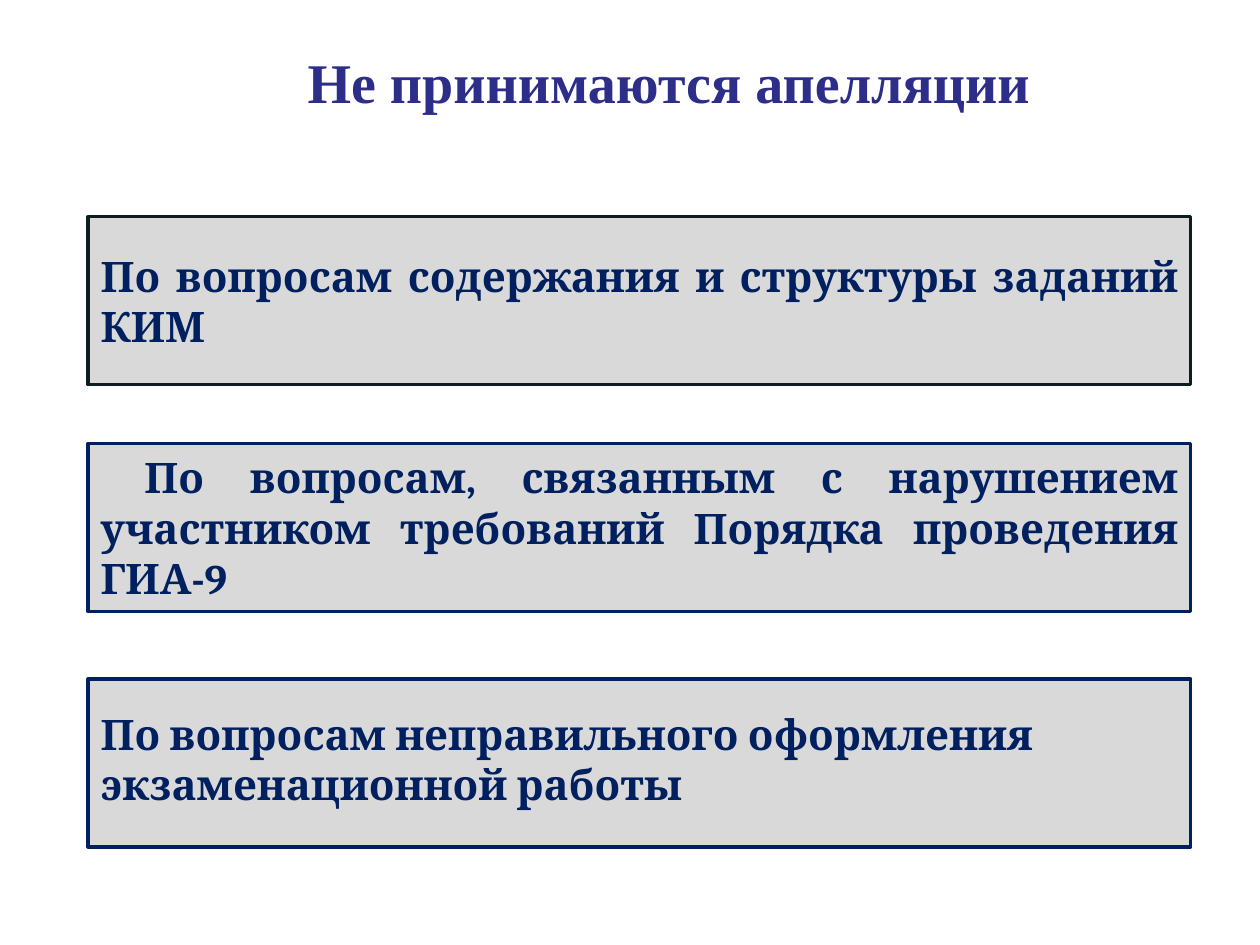
from pptx import Presentation
from pptx.dml.color import RGBColor
from pptx.enum.shapes import MSO_SHAPE
from pptx.enum.text import MSO_ANCHOR, MSO_AUTO_SIZE, PP_ALIGN
from pptx.util import Pt

TITLE_BLUE = RGBColor(0x2D, 0x2D, 0x8A)
NAVY = RGBColor(0x00, 0x20, 0x60)
NEAR_BLACK = RGBColor(0x0E, 0x1E, 0x20)
PALE_GRAY = RGBColor(0xD9, 0xD9, 0xD9)

BOX_LEFT, BOX_WIDTH, BOX_HEIGHT = 50.4, 630, 96

# Top, outline, alignment, first-line indent, bottom inset, paragraphs
REASONS = [
    (123.8, NEAR_BLACK, PP_ALIGN.JUSTIFY, 0, 3.6,
     ["По вопросам содержания и структуры заданий КИМ"]),
    (253.4, NAVY, PP_ALIGN.JUSTIFY, 25, 3.6,
     ["По вопросам, связанным с нарушением участником требований "
      "Порядка проведения ГИА-9"]),
    (388, NAVY, PP_ALIGN.LEFT, 0, 8.6,
     ["По вопросам неправильного оформления", "экзаменационной работы"]),
]


def add_run(paragraph, text, font_name, size, color):
    run = paragraph.add_run()
    run.text = text
    run.font.name = font_name
    run.font.size = Pt(size)
    run.font.bold = True
    run.font.color.rgb = color


def place_title(slide, left, top, width, height):
    title = slide.shapes.title
    title.left, title.top = Pt(left), Pt(top)
    title.width, title.height = Pt(width), Pt(height)
    frame = title.text_frame
    frame.auto_size = MSO_AUTO_SIZE.NONE
    frame.vertical_anchor = MSO_ANCHOR.MIDDLE
    heading = frame.paragraphs[0]
    heading.alignment = PP_ALIGN.CENTER
    add_run(heading, "Не принимаются апелляции", "Times New Roman", 32, TITLE_BLUE)


def add_reason(slide, left, top, width, height, outline, alignment, indent,
               bottom_inset, lines):
    reason = slide.shapes.add_shape(
        MSO_SHAPE.RECTANGLE, Pt(left), Pt(top), Pt(width), Pt(height))
    reason.shadow.inherit = False
    reason.fill.solid()
    reason.fill.fore_color.rgb = PALE_GRAY
    reason.line.color.rgb = outline
    reason.line.width = Pt(2)

    frame = reason.text_frame
    frame.word_wrap = True
    frame.vertical_anchor = MSO_ANCHOR.MIDDLE
    frame.margin_bottom = Pt(bottom_inset)
    for index, line in enumerate(lines):
        paragraph = frame.add_paragraph() if index else frame.paragraphs[0]
        paragraph.alignment = alignment
        if indent:
            paragraph._p.get_or_add_pPr().set("indent", str(Pt(indent)))
        add_run(paragraph, line, "Cambria", 24, NAVY)


def main():
    presentation = Presentation()
    presentation.slide_width, presentation.slide_height = Pt(720), Pt(540)
    slide = presentation.slides.add_slide(presentation.slide_layouts[5])

    # Heading
    place_title(slide, 22.3, 22.3, 720, 48.2)

    # Grounds on which appeals are refused
    for top, *details in REASONS:
        add_reason(slide, BOX_LEFT, top, BOX_WIDTH, BOX_HEIGHT, *details)

    presentation.save("out.pptx")


if __name__ == "__main__":
    main()
